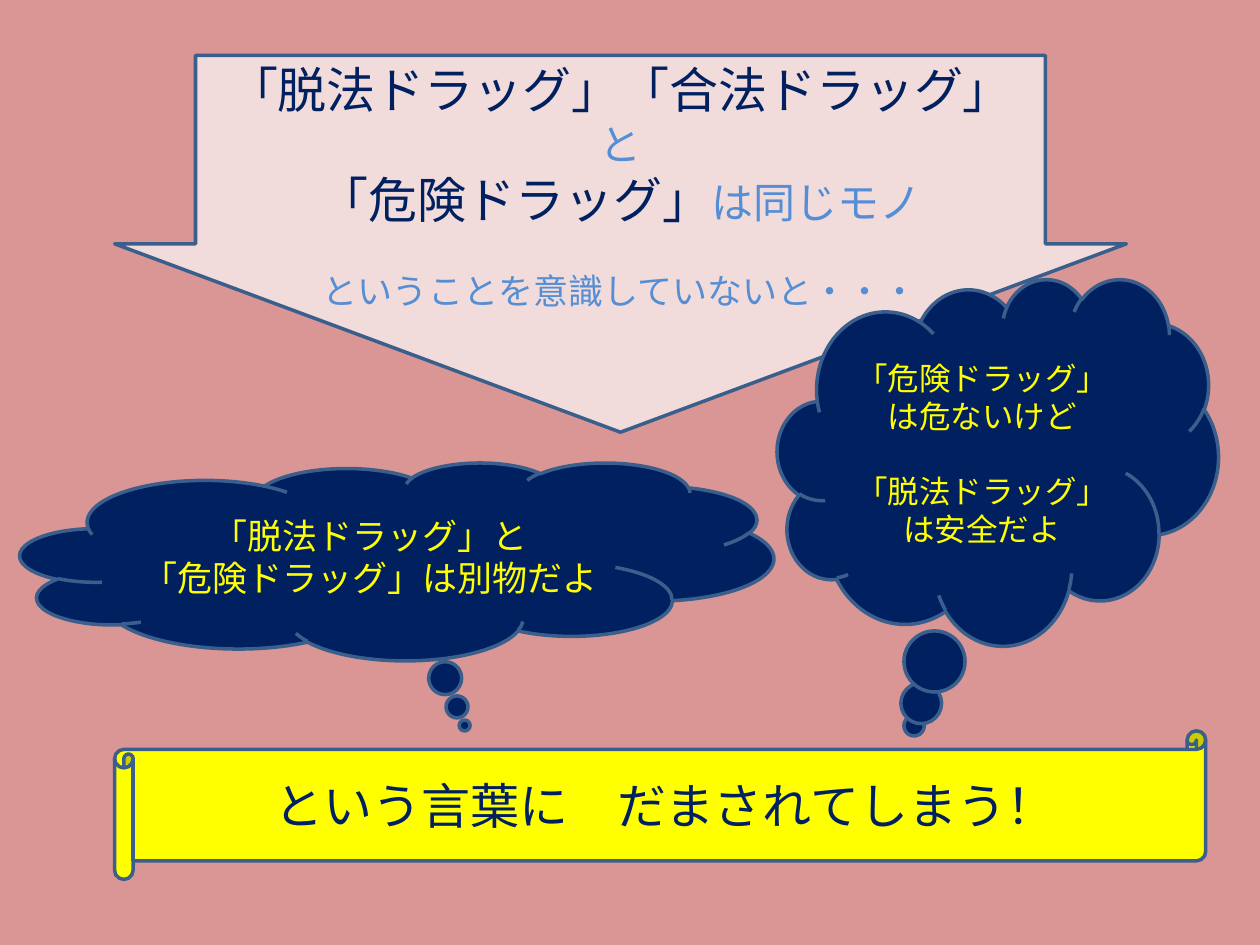
from dataclasses import dataclass

from lxml import etree
from pptx import Presentation
from pptx.dml.color import RGBColor
from pptx.enum.shapes import MSO_SHAPE
from pptx.enum.text import MSO_ANCHOR, PP_ALIGN
from pptx.oxml.ns import qn
from pptx.util import Inches, Pt

ARROW = MSO_SHAPE.DOWN_ARROW
SCROLL = MSO_SHAPE.HORIZONTAL_SCROLL
CLOUD = MSO_SHAPE.CLOUD_CALLOUT
MIDDLE = MSO_ANCHOR.MIDDLE
CENTER = PP_ALIGN.CENTER


@dataclass(frozen=True)
class Theme:
    """Colours, font and type sizes of the slide."""
    background: RGBColor = RGBColor.from_string("D99694")
    pale: RGBColor = RGBColor.from_string("F2DCDB")
    navy: RGBColor = RGBColor.from_string("002060")
    sky: RGBColor = RGBColor.from_string("558ED5")
    yellow: RGBColor = RGBColor.from_string("FFFF00")
    outline: RGBColor = RGBColor.from_string("3A5F8C")
    font: str = "Noto Sans CJK JP"
    large: int = 28
    medium: int = 24
    body: int = 20
    small: int = 18


THEME = Theme()


def add_panel(slide, preset, box, fill, adjustments=()):
    """Add an outlined preset shape with its text anchored in the middle."""
    panel = slide.shapes.add_shape(preset, *map(Inches, box))
    for index, value in enumerate(adjustments):
        panel.adjustments[index] = value
    panel.shadow.inherit = False
    panel.fill.solid()
    panel.fill.fore_color.rgb = fill
    panel.line.color.rgb = THEME.outline
    panel.line.width = Pt(2)
    panel.text_frame.word_wrap = True
    panel.text_frame.vertical_anchor = MIDDLE
    return panel


def style_run(run, size, color):
    """Give a run its size, colour and Latin and East Asian fonts."""
    run.font.size = Pt(size)
    run.font.color.rgb = color
    run.font.name = THEME.font
    east_asian = etree.SubElement(run._r.get_or_add_rPr(), qn("a:ea"))
    east_asian.set("typeface", THEME.font)


def write_lines(panel, lines, gap_before_last=0):
    """Write centred paragraphs, each a list of (text, size, colour) runs."""
    frame = panel.text_frame
    for index, pieces in enumerate(lines):
        paragraph = frame.add_paragraph() if index else frame.paragraphs[0]
        paragraph.alignment = CENTER
        for text, size, color in pieces:
            run = paragraph.add_run()
            run.text = text
            style_run(run, size, color)
    if gap_before_last:
        paragraph.space_before = Pt(gap_before_last)


def add_premise(slide):
    """Add the large arrow that states the premise."""
    premise = add_panel(slide, ARROW, (0.91, 0.44, 8.03, 2.99), THEME.pale, (0.84, 0.5))
    premise.text_frame.margin_top = Inches(0.38)
    write_lines(premise, [
        [("「脱法ドラッグ」「合法ドラッグ」", THEME.large, THEME.navy)],
        [("と", THEME.medium, THEME.sky)],
        [("「危険ドラッグ」", THEME.large, THEME.navy),
         ("は同じモノ", THEME.medium, THEME.sky)],
        [("ということを意識していないと・・・", THEME.body, THEME.sky)],
    ], gap_before_last=23.5)


def add_conclusion(slide):
    """Add the scroll with the conclusion."""
    conclusion = add_panel(slide, SCROLL, (0.91, 5.8, 8.66, 1.18), THEME.yellow)
    write_lines(conclusion, [[("という言葉に　だまされてしまう！", THEME.large, THEME.navy)]])


def add_claim(slide, box, tail, lines, size, gap_before_last=0):
    """Add a thought cloud with a misleading claim."""
    claim = add_panel(slide, CLOUD, box, THEME.navy, tail)
    write_lines(claim, [[(line, size, THEME.yellow)] for line in lines], gap_before_last)


def main():
    """Build and save the slide."""
    deck = Presentation()
    deck.slide_width, deck.slide_height = Inches(10), Inches(7.5)
    slide = deck.slides.add_slide(deck.slide_layouts[6])
    slide.background.fill.solid()
    slide.background.fill.fore_color.rgb = THEME.background
    add_premise(slide)
    add_conclusion(slide)
    add_claim(slide, (0.16, 3.67, 5.98, 1.57), (0.09, 0.83),
              ["「脱法ドラッグ」と", "「危険ドラッグ」は別物だよ"], THEME.body)
    add_claim(slide, (6.17, 2.21, 3.5, 2.91), (-0.19, 0.72),
              ["「危険ドラッグ」は危ないけど", "「脱法ドラッグ」は安全だよ"],
              THEME.small, gap_before_last=21.5)
    deck.save("out.pptx")


if __name__ == "__main__":
    main()
